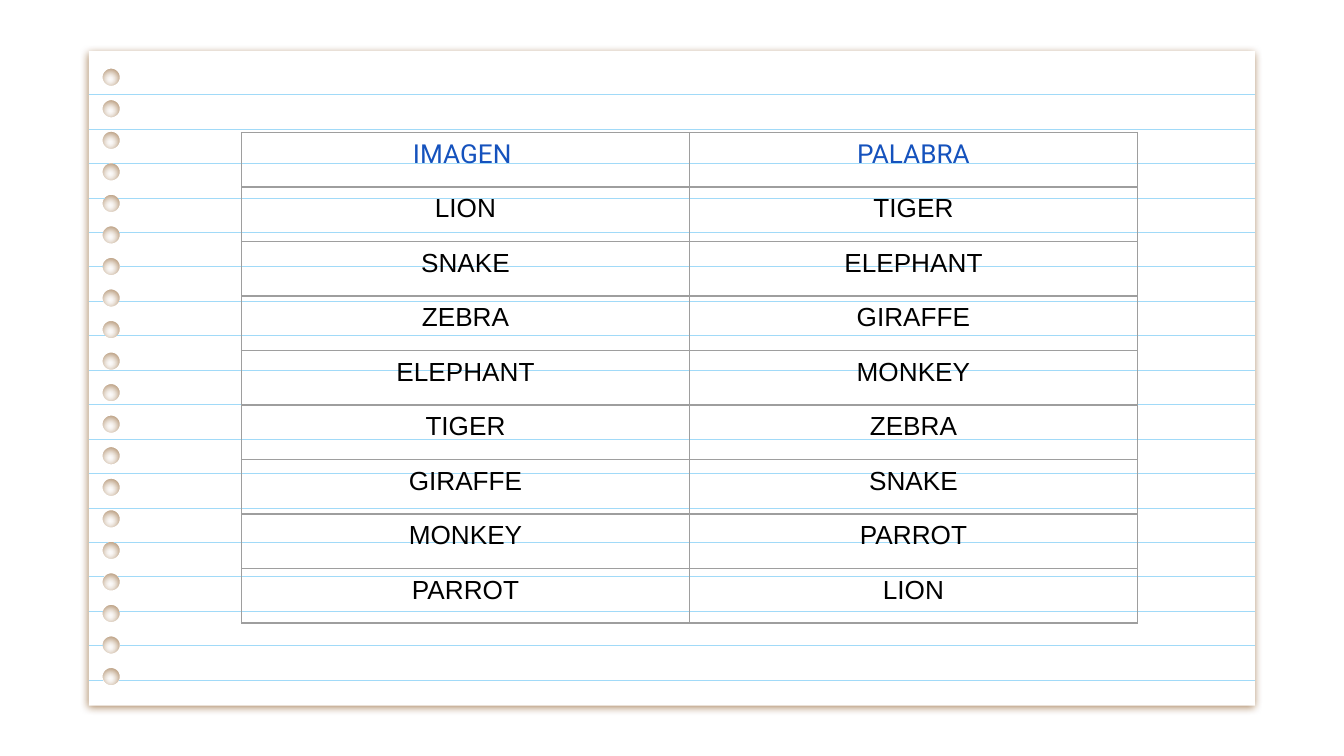
import math

import pptx
import pptx.dml.color
import pptx.enum.shapes
import pptx.enum.text
import pptx.oxml
import pptx.oxml.ns
import pptx.util

Pt = pptx.util.Pt
RGB = pptx.dml.color.RGBColor.from_string

COLORS = {
    "paper": "FFFFFF",
    "shade": "783F04",
    "rule": "A1DAF8",
    "grid": "9E9E9E",
    "head": "1552BD",
    "word": "000000",
}
FONTS = {"head": "Roboto", "word": "Arial"}
NS = pptx.oxml.ns.nsdecls("a")

LEFT, TOP, RIGHT, BASE = 47.6, 27.4, 672.3, 378
HOLE_X, HOLE_R = 59.6, 4.6
HOLES = [41.4 + 16.9 * i for i in range(20)]
RULES = [50.7 + 18.45 * i for i in range(18)]

ROWS = [
    ("IMAGEN ", "PALABRA"),
    ("LION", "TIGER"),
    ("SNAKE", "ELEPHANT"),
    ("ZEBRA", "GIRAFFE"),
    ("ELEPHANT", "MONKEY"),
    ("TIGER", "ZEBRA"),
    ("GIRAFFE", "SNAKE"),
    ("MONKEY", "PARROT"),
    ("PARROT", "LION"),
]


def ring(x, y, r, count=32):
    """Return the corner points of a many-sided circle."""
    turns = [2 * math.pi * i / count for i in range(count)]
    return [(x + r * math.cos(t), y + r * math.sin(t)) for t in turns]


def spans(y):
    """Return the left and right ends of the rule parts at y, clear of holes."""
    for hole in HOLES:
        gap = HOLE_R ** 2 - (y - hole) ** 2
        if gap > 0:
            half = math.sqrt(gap)
            return [(LEFT, HOLE_X - half), (HOLE_X + half, RIGHT)]
    return [(LEFT, RIGHT)]


class Page:
    def __init__(self, slide):
        self.slide = slide
        self.size = 14
        self.grid = 0.75
        self.thin = 0.4

    def sheet(self, loops):
        """Draw one shadowed shape; loops after the first are cut out of it."""
        loops = [[(Pt(x), Pt(y)) for x, y in loop] for loop in loops]
        pen = self.slide.shapes.build_freeform(*loops[0][0], scale=1.0)
        pen.add_line_segments(loops[0][1:], close=True)
        for loop in loops[1:]:
            pen.move_to(*loop[0])
            pen.add_line_segments(loop[1:], close=True)
        shape = pen.convert_to_shape()
        shape.fill.solid()
        shape.fill.fore_color.rgb = RGB(COLORS["paper"])
        shape.line.fill.background()
        shape.shadow.inherit = False
        effects = shape._element.spPr.find(pptx.oxml.ns.qn("a:effectLst"))
        effects.append(pptx.oxml.parse_xml(
            f'<a:outerShdw {NS} blurRad="{Pt(4.5)}" dist="{Pt(1.5)}" '
            f'dir="5400000" algn="bl" rotWithShape="0">'
            f'<a:srgbClr val="{COLORS["shade"]}"><a:alpha val="61000"/>'
            f'</a:srgbClr></a:outerShdw>'))

    def rule(self, start, end, y):
        kind = pptx.enum.shapes.MSO_CONNECTOR.STRAIGHT
        line = self.slide.shapes.add_connector(
            kind, Pt(start), Pt(y), Pt(end), Pt(y))
        line.line.width = Pt(self.thin)
        line.line.color.rgb = RGB(COLORS["rule"])
        line._element.spPr.append(
            pptx.oxml.parse_xml(f"<a:effectLst {NS}/>"))

    def table(self, rows, left, top, width, height):
        frame = self.slide.shapes.add_table(
            len(rows), len(rows[0]), Pt(left), Pt(top), Pt(width), Pt(height))
        table = frame.table
        table.first_row = table.horz_banding = False
        for r, row in enumerate(rows):
            for c, text in enumerate(row):
                self.cell(table.cell(r, c), text, "word" if r else "head")

    def cell(self, cell, text, role):
        props = cell._tc.get_or_add_tcPr()
        for side in "LRTB":
            props.append(pptx.oxml.parse_xml(
                f'<a:ln{side} {NS} w="{Pt(self.grid)}"><a:solidFill>'
                f'<a:srgbClr val="{COLORS["grid"]}"/></a:solidFill>'
                f'</a:ln{side}>'))
        cell.fill.background()
        cell.text = text
        para = cell.text_frame.paragraphs[0]
        para.alignment = pptx.enum.text.PP_ALIGN.CENTER
        para.font.size = Pt(self.size)
        para.font.name = FONTS[role]
        para.font.color.rgb = RGB(COLORS[role])


def main():
    deck = pptx.Presentation()
    deck.slide_width, deck.slide_height = Pt(720), Pt(405)
    page = Page(deck.slides.add_slide(deck.slide_layouts[6]))

    edge = [(LEFT, TOP), (LEFT, BASE), (RIGHT, BASE), (RIGHT, TOP)]
    page.sheet([edge] + [ring(HOLE_X, y, HOLE_R) for y in HOLES])
    for y in RULES:
        for start, end in spans(y):
            page.rule(start, end, y)
    page.table(ROWS, 129.4, 71, 480, 263)

    deck.save("out.pptx")


if __name__ == "__main__":
    main()
